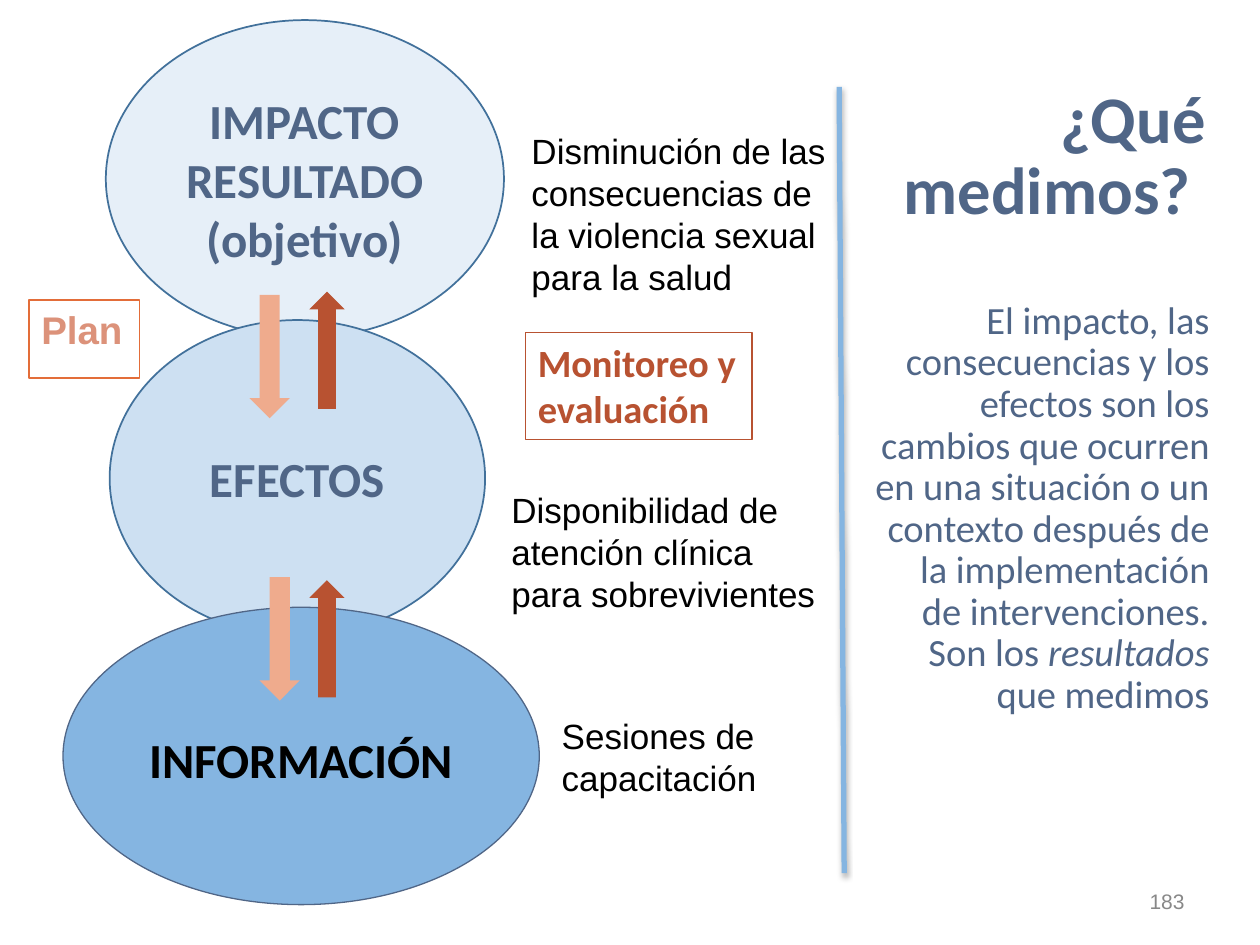
from dataclasses import dataclass

from lxml import etree
from pptx import Presentation
from pptx.dml.color import RGBColor
from pptx.enum.shapes import MSO_CONNECTOR, MSO_SHAPE
from pptx.enum.text import MSO_ANCHOR, MSO_AUTO_SIZE, PP_ALIGN
from pptx.oxml import parse_xml
from pptx.oxml.ns import nsdecls, qn
from pptx.util import Inches, Pt

OVAL, RECT, ARROW = MSO_SHAPE.OVAL, MSO_SHAPE.RECTANGLE, MSO_SHAPE.RIGHT_ARROW
LEFT, CENTER, RIGHT = PP_ALIGN.LEFT, PP_ALIGN.CENTER, PP_ALIGN.RIGHT
TOP, MIDDLE = MSO_ANCHOR.TOP, MSO_ANCHOR.MIDDLE
STRAIGHT, NO_FIT = MSO_CONNECTOR.STRAIGHT, MSO_AUTO_SIZE.NONE
COLS, ROWS = 100, 75
WIDTH, HEIGHT = Inches(10), Inches(7.5)


@dataclass(frozen=True)
class Theme:
    """Colours, fonts and type sizes of the slide."""
    slate: str = "506687"
    black: str = "000000"
    gray: str = "888888"
    edge: str = "42719B"
    pale: str = "E6EFF8"
    light: str = "CDE0F2"
    blue: str = "85B5E1"
    rust: str = "B85231"
    peach: str = "EFAB8D"
    orange: str = "E36D39"
    salmon: str = "DC927A"
    head: str = "Calibri"
    plain: str = "Arial"
    title: int = 38
    level: int = 28
    space: int = 32
    body: int = 22
    note: int = 20
    number: int = 12


T = Theme()


def grid(col, row, cols, rows):
    """Turn grid columns and rows into left, top, width and height."""
    return (int(WIDTH * col / COLS), int(HEIGHT * row / ROWS),
            int(WIDTH * cols / COLS), int(HEIGHT * rows / ROWS))


def write(sp, *paragraphs, size=T.note, color=T.black, font=T.plain, bold=False,
          align=LEFT, anchor=TOP, spacing=1.0):
    """Write paragraphs, each a string or a list of (text, size, italic) runs."""
    tf = sp.text_frame
    tf.word_wrap, tf.auto_size, tf.vertical_anchor = True, NO_FIT, anchor
    for i, runs in enumerate(paragraphs):
        p = tf.add_paragraph() if i else tf.paragraphs[0]
        p.alignment, p.line_spacing, p.space_before = align, spacing, Pt(0)
        for text, run_size, italic in [(runs, size, False)] if isinstance(runs, str) else runs:
            r = p.add_run()
            r.text = text
            r.font.size, r.font.name = Pt(run_size), font
            r.font.bold, r.font.italic = bold, italic
            r.font.color.rgb = RGBColor.from_string(color)


def add_figure(s, kind, cells, fill=None, line=None, weight=0.75):
    """Add a flat preset shape with optional fill and outline."""
    sp = s.shapes.add_shape(kind, *grid(*cells))
    sp.shadow.inherit = False
    if fill:
        sp.fill.solid()
        sp.fill.fore_color.rgb = RGBColor.from_string(fill)
    else:
        sp.fill.background()
    if line:
        sp.line.color.rgb = RGBColor.from_string(line)
        sp.line.width = Pt(weight)
    else:
        sp.line.fill.background()
    return sp


def add_level(s, cells, fill, line, weight, color, *paragraphs):
    """Add one labelled ellipse of the results chain."""
    sp = add_figure(s, OVAL, cells, fill, line, weight)
    write(sp, *paragraphs, size=T.level, color=color, font=T.head, bold=True,
          align=CENTER, anchor=MIDDLE)


def add_tag(s, cells, text, line, color, font):
    """Add an outlined label."""
    sp = add_figure(s, RECT, cells, line=line)
    write(sp, text, size=T.body, color=color, font=font, bold=True)


def add_arrow(s, cells, fill, rotation):
    """Add a block arrow turned to point up or down."""
    add_figure(s, ARROW, cells, fill).rotation = rotation


def add_text(s, cells, text, **fmt):
    """Add a text box."""
    write(s.shapes.add_textbox(*grid(*cells)), text, **fmt)


def add_divider(s, start, end):
    """Add the divider line with a soft shadow below it."""
    x, y, end_x, end_y = grid(*start, *end)
    line = s.shapes.add_connector(STRAIGHT, x, y, end_x, end_y)
    line.line.color.rgb = RGBColor.from_string(T.blue)
    line.line.width = Pt(3)
    line._element.spPr.append(parse_xml(
        f'<a:effectLst {nsdecls("a")}><a:outerShdw blurRad="{Pt(3.1)}" dist="{Pt(1.8)}" '
        f'dir="5400000" rotWithShape="0"><a:srgbClr val="{T.black}">'
        '<a:alpha val="33000"/></a:srgbClr></a:outerShdw></a:effectLst>'))


def fill_placeholder(sp, cells, *paragraphs, **fmt):
    """Move a placeholder and write right-aligned text without bullets."""
    sp.left, sp.top, sp.width, sp.height = grid(*cells)
    pPr = sp.text_frame.paragraphs[0]._p.get_or_add_pPr()
    pPr.set("marL", "0")
    pPr.set("indent", "0")
    etree.SubElement(pPr, qn("a:buNone"))
    write(sp, *paragraphs, color=T.slate, font=T.head, align=RIGHT, spacing=0.9, **fmt)


def main():
    """Build the slide and save it."""
    prs = Presentation()
    prs.slide_width, prs.slide_height = WIDTH, HEIGHT
    s = prs.slides.add_slide(prs.slide_layouts[1])

    fill_placeholder(s.shapes.title, (67.7, 7.5, 29, 10), "¿Qué medimos? ",
                     size=T.title, bold=True, anchor=MIDDLE)
    fill_placeholder(s.placeholders[1], (68.3, 23.4, 28.7, 31.6), [
        ("El impacto, las consecuencias y los efectos son los cambios que ocurren en una "
         "situación o un contexto después de la implementación de intervenciones. Son los",
         T.body, False),
        (" resultados ", T.body, True),
        ("que medimos", T.body, False)])

    add_level(s, (8.4, 1.6, 31.6, 25.2), T.pale, T.edge, 1, T.slate,
              "IMPACTO", "RESULTADO", "(objetivo)")
    add_level(s, (8.7, 25.4, 29.8, 25.1), T.light, T.edge, 1, T.slate, "EFECTOS")
    add_level(s, (5, 48.2, 37.8, 23.6), T.blue, T.slate, 0.75, T.black,
              [("INFORMACIÓN", T.level, False), (" ", T.space, False)])

    for down_col, down_row, up_row in ((16.5, 26.7, 26.4), (17.3, 49.1, 49.3)):
        add_arrow(s, (down_col, down_row, 9.8, 3.2), T.peach, 90)
        add_arrow(s, (21.3, up_row, 9.3, 2.8), T.rust, 270)

    add_tag(s, (2.3, 23.8, 8.8, 6.2), "Plan", T.orange, T.salmon, T.plain)
    add_tag(s, (41.7, 26.4, 18, 8.5), "Monitoreo y evaluación", T.rust, T.rust, T.head)

    for cells, text in (
            ((41.2, 9.8, 25.4, 10.1),
             "Disminución de las consecuencias de la violencia sexual para la salud"),
            ((39.6, 38.3, 27, 7.1), "Disponibilidad de atención clínica para sobrevivientes"),
            ((43.6, 56.2, 24, 4), "Sesiones de capacitación")):
        add_text(s, cells, text)

    add_divider(s, (66.6, 6.9), (67, 69.3))
    add_text(s, (71.7, 69.5, 23.3, 4), "183", size=T.number, color=T.gray,
             align=RIGHT, anchor=MIDDLE)
    prs.save("out.pptx")


if __name__ == "__main__":
    main()
